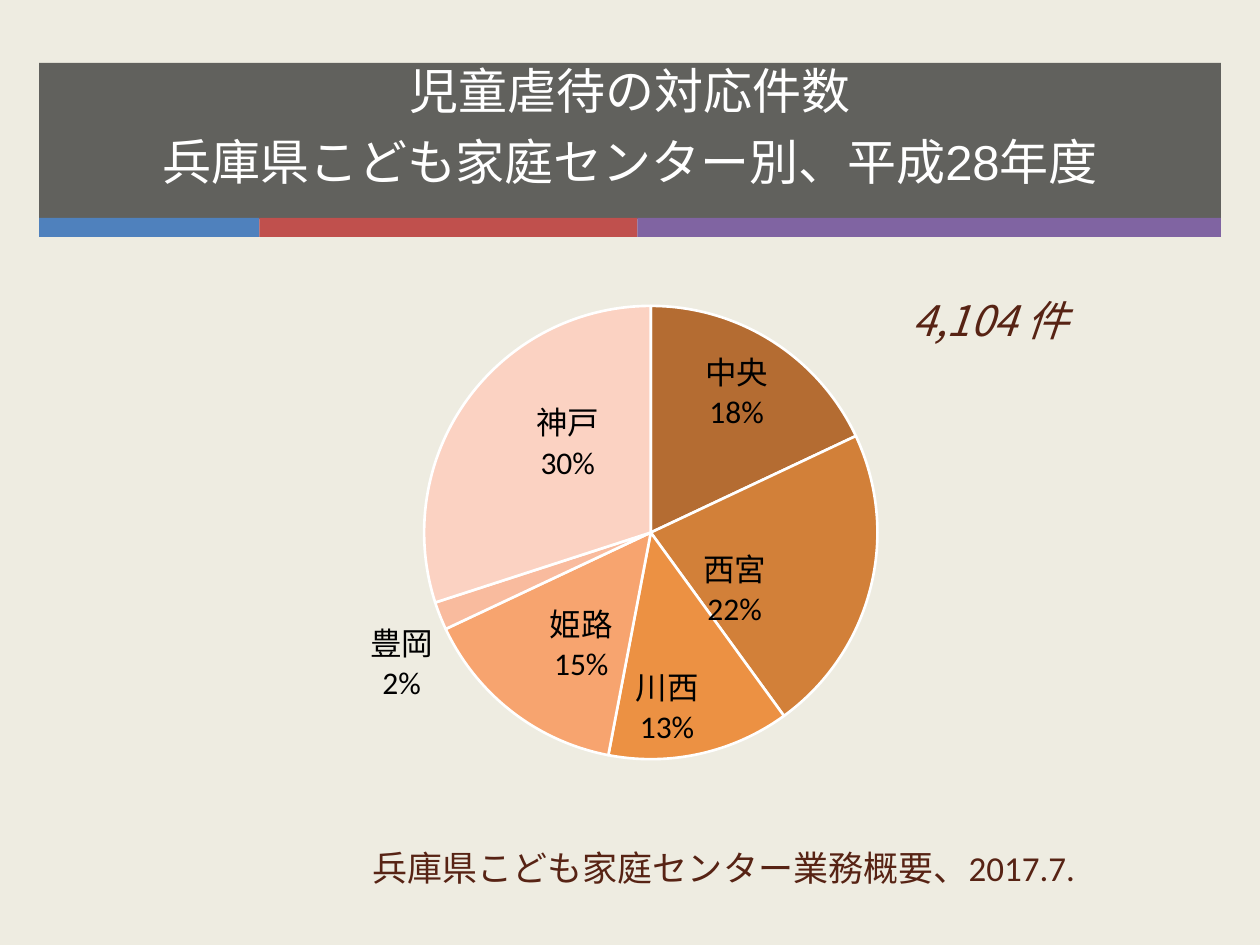
from lxml import etree
from pptx import Presentation
from pptx.chart.data import CategoryChartData
from pptx.dml.color import RGBColor
from pptx.enum.chart import XL_CHART_TYPE as ChartType, XL_LABEL_POSITION as LabelPosition
from pptx.enum.shapes import MSO_SHAPE as Preset
from pptx.enum.text import MSO_ANCHOR as Anchor, PP_ALIGN as Align
from pptx.oxml import parse_xml
from pptx.oxml.ns import nsdecls, qn
from pptx.util import Inches, Pt

COLORS = {
    "background": "EEECE1", "banner": "262626", "title": "FFFFFF",
    "blue": "4F81BD", "red": "C0504D", "purple": "8064A2",
    "brown": "572314", "label": "000000", "edge": "FFFFFF",
}
CJK_FONT = "Noto Sans CJK JP"
CENTERS = [
    ("中央", 18, "B46C32", LabelPosition.INSIDE_END, None),
    ("西宮", 22, "D28039", LabelPosition.CENTER, (-0.03, 0.04)),
    ("川西", 13, "EC9143", LabelPosition.INSIDE_END, None),
    ("姫路", 15, "F7A46F", LabelPosition.CENTER, (0, 0.03)),
    ("豊岡", 2, "F9BB9E", LabelPosition.OUTSIDE_END, None),
    ("神戸", 30, "FBD2C2", LabelPosition.CENTER, (0.01, -0.04)),
]


def rgb(color):
    return RGBColor.from_string(COLORS.get(color, color))


def format_font(font, size, color, name="Calibri", italic=False):
    font.size = Pt(size)
    font.name = name
    font.italic = italic
    font.color.rgb = rgb(color)


def manual_layout(x, y, size=None):
    inner = '<c:layoutTarget val="inner"/><c:xMode val="edge"/><c:yMode val="edge"/>' if size else ""
    extent = f'<c:w val="{size[0]}"/><c:h val="{size[1]}"/>' if size else ""
    return parse_xml(
        f'<c:layout {nsdecls("c")}><c:manualLayout>{inner}'
        f'<c:x val="{x}"/><c:y val="{y}"/>{extent}</c:manualLayout></c:layout>'
    )


class SlideBuilder:
    def __init__(self, page):
        self.page = page
        page.background.fill.solid()
        page.background.fill.fore_color.rgb = rgb("background")

    def bar(self, left, top, width, height, color, opacity=100):
        box = self.page.shapes.add_shape(
            Preset.RECTANGLE, Inches(left), Inches(top), Inches(width), Inches(height))
        box.shadow.inherit = False
        box.line.fill.background()
        box.fill.solid()
        box.fill.fore_color.rgb = rgb(color)
        if opacity < 100:
            shade = box.fill._xPr.find(".//" + qn("a:srgbClr"))
            etree.SubElement(shade, qn("a:alpha")).set("val", str(opacity * 1000))

    def text(self, text, left, top, width, height, align=Align.LEFT, anchor=Anchor.TOP,
             wrap=True, spacing=None, after=None, **style):
        box = self.page.shapes.add_textbox(
            Inches(left), Inches(top), Inches(width), Inches(height))
        frame = box.text_frame
        frame.word_wrap = wrap
        frame.vertical_anchor = anchor
        para = frame.paragraphs[0]
        para.text = text
        para.alignment = align
        para.line_spacing = spacing
        para.space_after = after
        for span in para.runs:
            format_font(span.font, **style)
            latin = span.font._element.find(qn("a:latin"))
            east_asian = etree.Element(qn("a:ea"))
            east_asian.set("typeface", CJK_FONT)
            latin.addnext(east_asian)

    def show_share(self, labels):
        for name in ("showVal", "showCatName", "showPercent"):
            labels.find(qn("c:" + name)).set("val", "0" if name == "showVal" else "1")
        separator = etree.Element(qn("c:separator"))
        separator.text = "\n"
        labels.find(qn("c:showBubbleSize")).addnext(separator)

    def pie(self, left, top, width, height, slices):
        data = CategoryChartData()
        data.categories = [name for name, *_ in slices]
        data.add_series("Series 1", [value for _, value, *_ in slices])
        chart = self.page.shapes.add_chart(
            ChartType.PIE, Inches(left), Inches(top), Inches(width), Inches(height), data).chart
        chart.has_legend = False
        chart.has_title = False
        format_font(chart.font, 18, "label")
        plot = chart.plots[0]
        plot.vary_by_categories = True
        area = chart._chartSpace.find(".//" + qn("c:plotArea"))
        for layout in area.findall(qn("c:layout")):
            area.remove(layout)
        area.insert(0, manual_layout(0.23, 0.13, (0.53, 0.7)))
        series = plot.series[0]
        for index, (_, _, color, position, offset) in enumerate(slices):
            point = series.points[index]
            point.format.fill.solid()
            point.format.fill.fore_color.rgb = rgb(color)
            point.format.line.color.rgb = rgb("edge")
            point.format.line.width = Pt(1.5)
            format_font(point.data_label.font, 18, "label")
            point.data_label.position = position
            label = series._element.findall(".//" + qn("c:dLbl"))[index]
            self.show_share(label)
            if offset:
                label.find(qn("c:idx")).addnext(manual_layout(*offset))


def main():
    deck = Presentation()
    deck.slide_width, deck.slide_height = Inches(10), Inches(7.5)
    builder = SlideBuilder(deck.slides.add_slide(deck.slide_layouts[6]))
    builder.bar(0.31, 0.5, 9.38, 1.24, "banner", opacity=70)
    left = 0.31
    for width, color in ((1.75, "blue"), (3, "red"), (4.63, "purple")):
        builder.bar(left, 1.73, width, 0.15, color)
        left += width
    builder.text("児童虐待の対応件数\v兵庫県こども家庭センター別、平成28年度", 0.31, 0.42, 9.38, 1.06,
                 align=Align.CENTER, anchor=Anchor.MIDDLE, spacing=1.2, after=Pt(18),
                 size=28, color="title", name="Arial")
    builder.pie(1.77, 1.76, 6.86, 5.14, CENTERS)
    builder.text("4,104 件", 7.14, 2.29, 1.93, 0.5, wrap=False,
                 size=24, color="brown", name=CJK_FONT, italic=True)
    builder.text("兵庫県こども家庭センター業務概要、2017.7.", 1.77, 6.67, 7.95, 0.44,
                 align=Align.CENTER, size=20, color="brown")
    deck.save("out.pptx")


if __name__ == "__main__":
    main()
